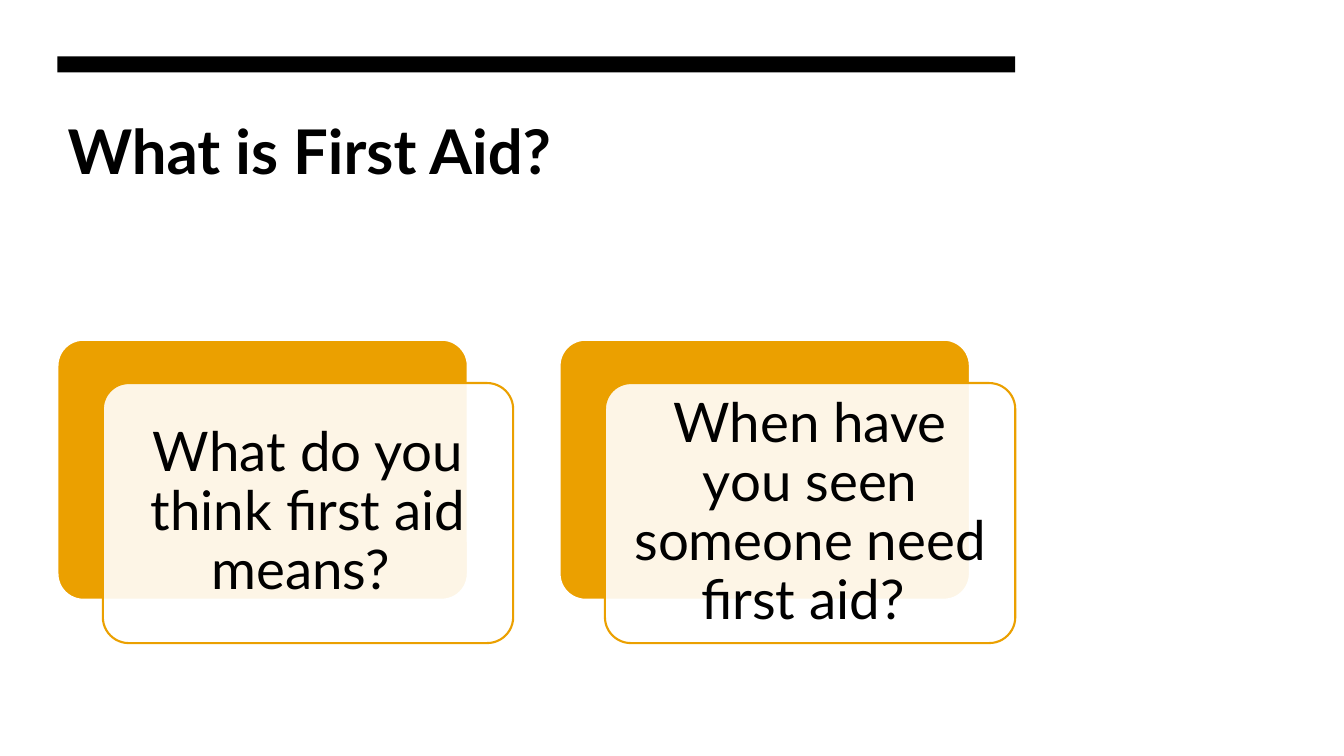
from lxml.etree import SubElement
from pptx import Presentation
from pptx.dml.color import RGBColor as Rgb
from pptx.enum.shapes import MSO_SHAPE as Kind
from pptx.enum.text import MSO_ANCHOR as Anchor, MSO_AUTO_SIZE as Fit, PP_ALIGN as Align
from pptx.oxml.ns import qn
from pptx.util import Inches, Pt

HUES = {"ink": "000000", "paper": "FFFFFF", "gold": "EBA000"}
FONT = "Lato"
LEFT, SPAN = 0.57, 9.5
CARD_W, CARD_H, CARD_TOP = 4.07, 2.58, 3.37
SHIFT_X, SHIFT_Y = 0.45, 0.43
STEP = SPAN - CARD_W - SHIFT_X
ASKS = ["What do you think first aid means? ", "When have you seen someone need first aid? "]


def hue(name):
    """Return the named colour."""
    return Rgb.from_string(HUES[name])


def box(shapes, kind, area, fill, line=None):
    """Add a filled shape with an optional outline."""
    shape = shapes.add_shape(kind, *map(Inches, area))
    shape.shadow.inherit = False
    shape.fill.solid()
    shape.fill.fore_color.rgb = hue(fill)
    if line:
        shape.line.color.rgb = hue(line)
        shape.line.width = Pt(1.5)
    else:
        shape.line.fill.background()
    return shape


def write(para, text, size, bold=False):
    """Add one styled run to a paragraph."""
    run = para.add_run()
    run.text = text
    run.font.name = FONT
    run.font.size = Pt(size)
    run.font.bold = bold
    run.font.color.rgb = hue("ink")


def fade(shape, share):
    """Set the opacity of a solid fill."""
    tint = shape.fill._xPr.find(qn("a:solidFill"))[0]
    SubElement(tint, qn("a:alpha"), val=str(int(share * 100000)))


def head(slide, text):
    """Place the title and the bar above it."""
    title = slide.shapes.title
    title.left, title.top, title.width, title.height = map(Inches, (LEFT, 1.07, SPAN, 1.6))
    frame = title.text_frame
    frame.auto_size = Fit.NONE
    frame.vertical_anchor = Anchor.TOP
    para = frame.paragraphs[0]
    para.alignment = Align.LEFT
    write(para, text, 44, True)
    box(slide.shapes, Kind.RECTANGLE, (LEFT, 0.56, SPAN, 0.16), "ink")


def card(slide, col, text):
    """Add a question card with a gold card behind it."""
    group = slide.shapes.add_group_shape().shapes
    left = LEFT + col * STEP
    back = box(group, Kind.ROUNDED_RECTANGLE, (left, CARD_TOP, CARD_W, CARD_H), "gold", "paper")
    area = (left + SHIFT_X, CARD_TOP + SHIFT_Y, CARD_W, CARD_H)
    front = box(group, Kind.ROUNDED_RECTANGLE, area, "paper", "gold")
    back.adjustments[0] = front.adjustments[0] = 0.1
    fade(front, 0.9)
    frame = front.text_frame
    frame.word_wrap = True
    frame.vertical_anchor = Anchor.MIDDLE
    frame.margin_left = frame.margin_right = Inches(0.16)
    frame.margin_top = frame.margin_bottom = Inches(0.16)
    para = frame.paragraphs[0]
    para.alignment = Align.CENTER
    para.line_spacing = 0.9
    write(para, text, 39)


def main():
    """Build and save the slide."""
    deck = Presentation()
    deck.slide_width, deck.slide_height = Inches(13.33), Inches(7.5)
    slide = deck.slides.add_slide(deck.slide_layouts[5])
    head(slide, "What is First Aid?")
    for col, text in enumerate(ASKS):
        card(slide, col, text)
    deck.save("out.pptx")


if __name__ == "__main__":
    main()
